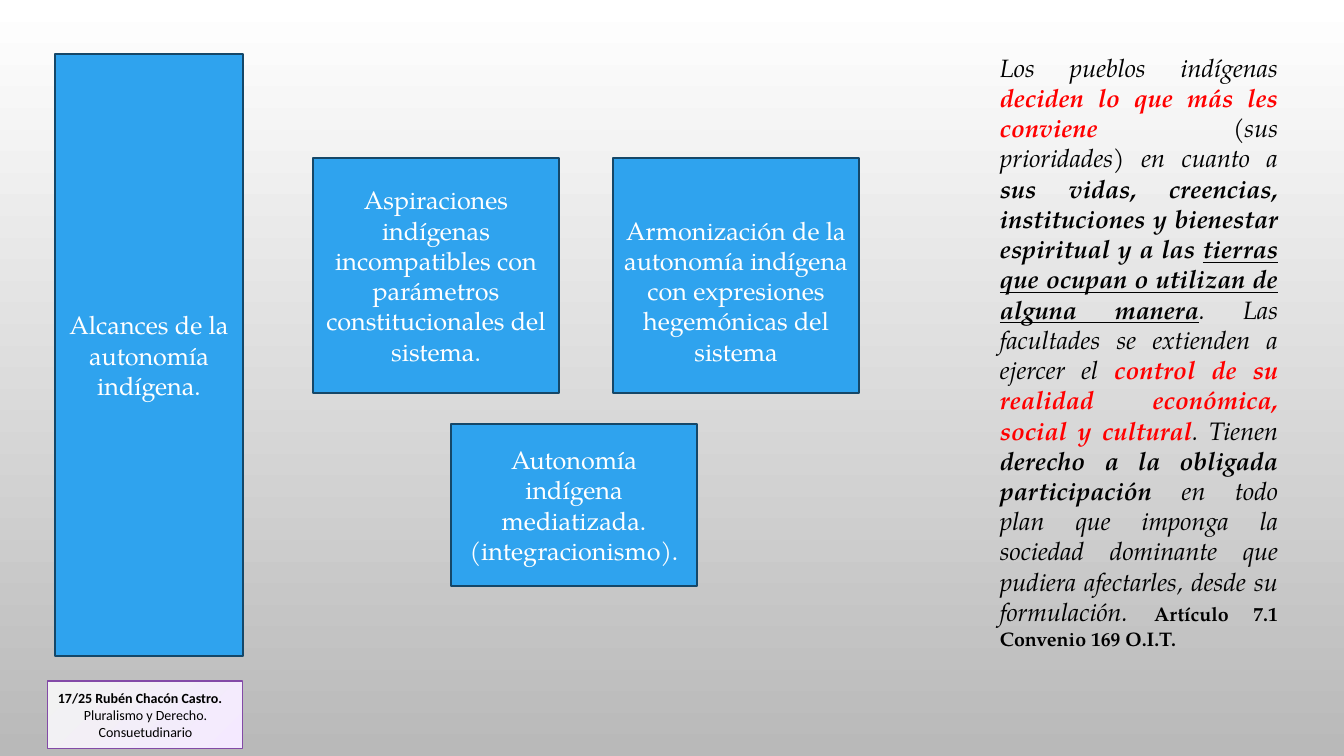
import pptx
import pptx.util
import pptx.dml.color
import pptx.enum.shapes
import pptx.enum.text

PX = 914400 / 100.8
SERIF = "TeX Gyre Pagella"
INK = {
    "blue": "2FA3EE", "navy": "154768", "white": "FFFFFF", "black": "000000",
    "red": "FF0000", "gray": "B9B9B9", "pale": "F2F2F2", "lilac": "F4E9FF",
    "plum": "834AA7",
}
ALIGN = pptx.enum.text.PP_ALIGN
ANCHOR = pptx.enum.text.MSO_ANCHOR


def px(num):
    return pptx.util.Emu(round(num * PX))


def rgb(name):
    return pptx.dml.color.RGBColor.from_string(INK[name])


def blend(fill, names, angle):
    fill.gradient()
    fill.gradient_angle = angle
    for stop, name in zip(fill.gradient_stops, names):
        stop.color.rgb = rgb(name)


def write(para, text, size=18, face=SERIF, color="black",
          bold=False, italic=False, under=False):
    run = para.add_run()
    run.text = text
    font = run.font
    font.size = pptx.util.Pt(size)
    font.name = face
    font.color.rgb = rgb(color)
    font.bold = bold
    font.italic = italic
    font.underline = under


def block(slide, box, line, width):
    shape = slide.shapes.add_shape(
        pptx.enum.shapes.MSO_SHAPE.RECTANGLE, *map(px, box))
    shape.shadow.inherit = False
    shape.line.color.rgb = rgb(line)
    shape.line.width = pptx.util.Pt(width)
    shape.text_frame.word_wrap = True
    shape.text_frame.vertical_anchor = ANCHOR.MIDDLE
    return shape


def card(slide, box, text, top=5):
    shape = block(slide, box, "navy", 1.25)
    shape.fill.solid()
    shape.fill.fore_color.rgb = rgb("blue")
    shape.text_frame.margin_top = px(top)
    para = shape.text_frame.paragraphs[0]
    para.alignment = ALIGN.CENTER
    write(para, text, color="white")


def cards(slide, box):
    left, top, wide, high = box
    size = 246
    row = 235
    card(slide, (left, top, size, row),
         "Aspiraciones indígenas incompatibles con parámetros "
         "constitucionales del sistema.")
    card(slide, (left + wide - size, top, size, row),
         "Armonización de la autonomía indígena con expresiones "
         "hegemónicas del sistema", top=35)
    card(slide, (left + 138, top + high - 162, size, 162),
         "Autonomía indígena mediatizada. (integracionismo).")


def quote(slide, box):
    frame = slide.shapes.add_textbox(*map(px, box)).text_frame
    frame.word_wrap = True
    para = frame.paragraphs[0]
    para.alignment = ALIGN.JUSTIFY
    plain = dict(italic=True)
    strong = dict(italic=True, bold=True)
    alert = dict(strong, color="red")
    parts = [
        ("Los pueblos indígenas ", plain),
        ("deciden lo que más les conviene ", alert),
        ("(sus prioridades) en cuanto a ", plain),
        ("sus vidas, creencias, instituciones y bienestar espiritual "
         "y a las ", strong),
        ("tierras que ocupan o utilizan de alguna manera",
         dict(strong, under=True)),
        (". Las facultades se extienden a ejercer el ", plain),
        ("control de su realidad económica, social y cultural", alert),
        (". Tienen ", plain),
        ("derecho a la obligada participación ", strong),
        ("en todo plan que imponga la sociedad dominante que pudiera "
         "afectarles, desde su formulación. ", plain),
        ("Artículo 7.1 Convenio 169 O.I.T.", dict(size=14, bold=True)),
    ]
    for text, form in parts:
        write(para, text, **form)


def credit(slide, box):
    shape = block(slide, box, "plum", 0.75)
    blend(shape.fill, ("pale", "lilac"), 315)
    frame = shape.text_frame
    head = frame.paragraphs[0]
    head.alignment = ALIGN.LEFT
    write(head, "17/25 Rubén Chacón Castro.", size=10, face="Calibri",
          bold=True)
    body = frame.add_paragraph()
    body.alignment = ALIGN.CENTER
    write(body, "Pluralismo y Derecho. Consuetudinario", size=10,
          face="Calibri")


def main():
    deck = pptx.Presentation()
    deck.slide_width = px(1344)
    deck.slide_height = px(756)
    slide = deck.slides.add_slide(deck.slide_layouts[6])
    blend(slide.background.fill, ("white", "gray"), 270)
    credit(slide, (48, 681, 195, 68))
    quote(slide, (990, 47, 298, 645))
    card(slide, (55, 54, 188, 602), "Alcances de la autonomía indígena.")
    cards(slide, (313, 158, 546, 428))
    deck.save("out.pptx")


if __name__ == "__main__":
    main()
